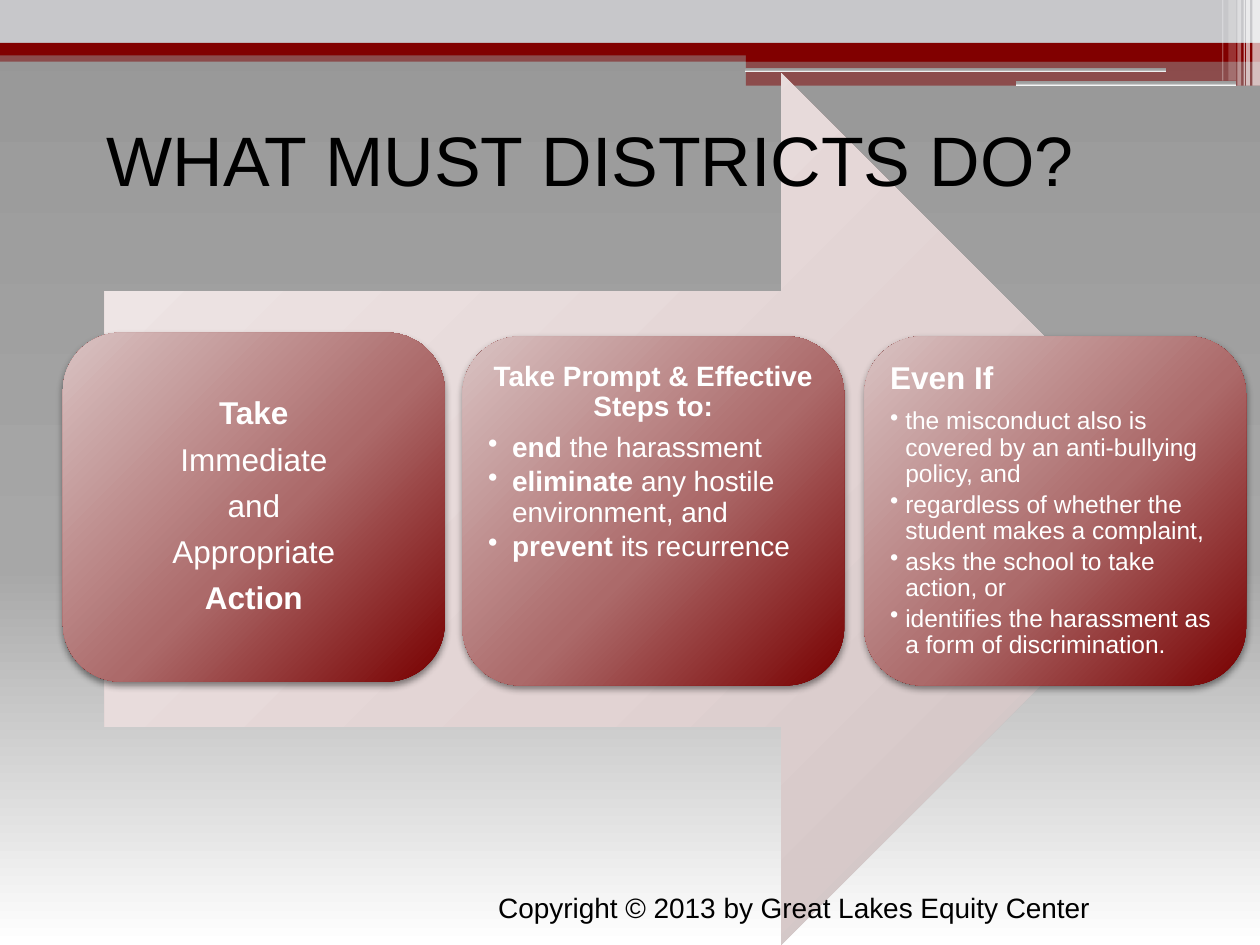
from dataclasses import dataclass

from lxml import etree
from pptx import Presentation
from pptx.dml.color import RGBColor
from pptx.enum import shapes, text
from pptx.oxml import ns
from pptx.util import Inches, Pt


@dataclass(frozen=True)
class Theme:
    font: str = "Arial"
    title: int = 40
    heading: int = 18
    body: int = 16
    detail: int = 14
    red: str = "810000"
    silver: str = "C7C7CA"
    white: str = "FFFFFF"
    black: str = "000000"
    backdrop: tuple = ((0, "979797"), (60, "A7A7A7"), (100, "FFFFFF"))
    arrow: tuple = ((0, "F1E9E9"), (55, "E2D3D3"), (100, "C9BEBE"))
    card: tuple = ((0, "D9C3C3"), (55, "AC6A6A"), (100, "780000"))


THEME = Theme()
SHAPE = shapes.MSO_SHAPE
ALIGN = text.PP_ALIGN
ANCHOR = text.MSO_ANCHOR


def child(parent, tag, **attributes):
    element = etree.SubElement(parent, ns.qn(tag))
    for name, value in attributes.items():
        element.set(name, str(value))
    return element


def set_gradient(fill, properties, stops, radial=False):
    fill.solid()
    solid = properties.find(ns.qn("a:solidFill"))
    gradient = etree.Element(ns.qn("a:gradFill"), rotWithShape="1")
    stop_list = child(gradient, "a:gsLst")
    for position, color in stops:
        stop = child(stop_list, "a:gs", pos=position * 1000)
        child(stop, "a:srgbClr", val=color)
    if radial:
        circle = child(gradient, "a:path", path="circle")
        child(circle, "a:fillToRect", l=-40000, t=-90000, r=140000, b=190000)
    else:
        child(gradient, "a:lin", ang=90 * 60000, scaled=0)
    properties.replace(solid, gradient)


def add_block(slide, box, kind=SHAPE.RECTANGLE, color=None, opacity=100, stops=None, radial=False):
    block = slide.shapes.add_shape(kind, *map(Inches, box))
    block.shadow.inherit = False
    block.line.fill.background()
    properties = block._element.spPr
    if stops:
        set_gradient(block.fill, properties, stops, radial)
    else:
        block.fill.solid()
        block.fill.fore_color.rgb = RGBColor.from_string(color)
        if opacity < 100:
            tint = properties.find(ns.qn("a:solidFill"))[0]
            child(tint, "a:alpha", val=opacity * 1000)
    return block


def add_text(frame, *runs, size, color=THEME.white, align=ALIGN.LEFT, spacing=None, after=0, hang=0):
    used = any(paragraph.runs for paragraph in frame.paragraphs)
    paragraph = frame.add_paragraph() if used else frame.paragraphs[0]
    if hang:
        properties = paragraph._p.get_or_add_pPr()
        properties.set("marL", str(Inches(hang)))
        properties.set("indent", str(-Inches(hang)))
        child(properties, "a:buChar", char="•")
        paragraph.level = 1
    paragraph.alignment = align
    if spacing:
        paragraph.line_spacing = spacing
    paragraph.space_after = Pt(after)
    for words, bold in runs:
        run = paragraph.add_run()
        run.text = words
        run.font.name = THEME.font
        run.font.size = Pt(size)
        run.font.bold = bold
        run.font.color.rgb = RGBColor.from_string(color)


def add_card(slide, left, top, anchor=ANCHOR.TOP):
    card = add_block(slide, (left, top, 3.03, 2.77), SHAPE.ROUNDED_RECTANGLE, stops=THEME.card, radial=True)
    effects = card._element.spPr.find(ns.qn("a:effectLst"))
    shadow = child(effects, "a:outerShdw", blurRad=Pt(4), dist=Pt(2), dir=90 * 60000, rotWithShape=0)
    child(child(shadow, "a:srgbClr", val=THEME.black), "a:alpha", val=45000)
    frame = card.text_frame
    frame.word_wrap = True
    frame.vertical_anchor = anchor
    frame.margin_left = frame.margin_right = Inches(0.07)
    frame.margin_top = frame.margin_bottom = Inches(0.07)
    return frame


def add_label(slide, box, anchor=ANCHOR.TOP):
    frame = slide.shapes.add_textbox(*map(Inches, box)).text_frame
    frame.word_wrap = True
    frame.vertical_anchor = anchor
    return frame


def add_banner(slide):
    for box, color, opacity in (
        ((0, 0.4, 10, 0.09), THEME.red, 50),
        ((0, 0, 10, 0.34), THEME.silver, 100),
        ((0, 0.34, 10, 0.1), THEME.red, 100),
        ((5.92, 0.39, 4.08, 0.1), THEME.red, 100),
        ((5.92, 0.48, 4.08, 0.2), THEME.red, 50),
    ):
        add_block(slide, box, color=color, opacity=opacity)
    for box in ((5.91, 0.54, 3.35, 0.03), (8.06, 0.64, 1.75, 0.04)):
        add_block(slide, box, SHAPE.ROUNDED_RECTANGLE, stops=THEME.backdrop)
    for left, width, height, opacity in (
        (9.94, 0.06, 0.68, 65),
        (9.89, 0.03, 0.68, 65),
        (9.87, 0.01, 0.68, 60),
        (9.82, 0.03, 0.68, 40),
        (9.75, 0.06, 0.64, 20),
        (9.7, 0.01, 0.64, 30),
    ):
        add_block(slide, (left, 0, width, height), color=THEME.white, opacity=opacity)


def add_steps(slide):
    action = add_card(slide, 0.5, 2.64, ANCHOR.MIDDLE)
    for words, bold in (
        ("Take", True), ("Immediate", False), ("and", False), ("Appropriate", False), ("Action", True),
    ):
        add_text(action, (words, bold), size=THEME.heading, align=ALIGN.CENTER, spacing=0.9, after=7)

    steps = add_card(slide, 3.67, 2.67)
    add_text(steps, ("Take Prompt & Effective Steps to:", True),
             size=THEME.body, align=ALIGN.CENTER, spacing=0.9, after=6)
    for verb, rest in (
        ("end", " the harassment"),
        ("eliminate ", "any hostile environment, and"),
        ("prevent", " its recurrence"),
    ):
        add_text(steps, (verb, True), (rest, False), size=THEME.body, spacing=0.9, after=2.5, hang=0.19)

    conditions = add_card(slide, 6.86, 2.67)
    add_text(conditions, ("Even If", True), size=THEME.heading, spacing=0.9, after=7)
    for condition in (
        "the misconduct also is covered by an anti‐bullying policy, and",
        "regardless of whether the student makes a complaint,",
        "asks the school to take action, or",
        "identifies the harassment as a form of discrimination.",
    ):
        add_text(conditions, (condition, False), size=THEME.detail, spacing=0.9, after=2.3, hang=0.12)


def main():
    deck = Presentation()
    deck.slide_width, deck.slide_height = Inches(10), Inches(7.5)
    slide = deck.slides.add_slide(deck.slide_layouts[6])
    backdrop = slide.background.fill
    backdrop.solid()
    set_gradient(backdrop, next(slide._element.iter(ns.qn("p:bgPr"))), THEME.backdrop)
    add_banner(slide)
    add_block(slide, (0.83, 0.58, 8.83, 6.92), SHAPE.RIGHT_ARROW, stops=THEME.arrow, radial=True)
    add_steps(slide)
    title = add_label(slide, (0.25, 0.67, 9, 1.17), ANCHOR.MIDDLE)
    add_text(title, ("\tWHAT MUST DISTRICTS DO?", False), size=THEME.title, color=THEME.black)
    copyright_line = add_label(slide, (3.83, 7.02, 4.92, 0.37))
    add_text(copyright_line, ("Copyright © 2013 by Great Lakes Equity Center", False),
             size=THEME.body, color=THEME.black, align=ALIGN.RIGHT)
    deck.save("out.pptx")


if __name__ == "__main__":
    main()
